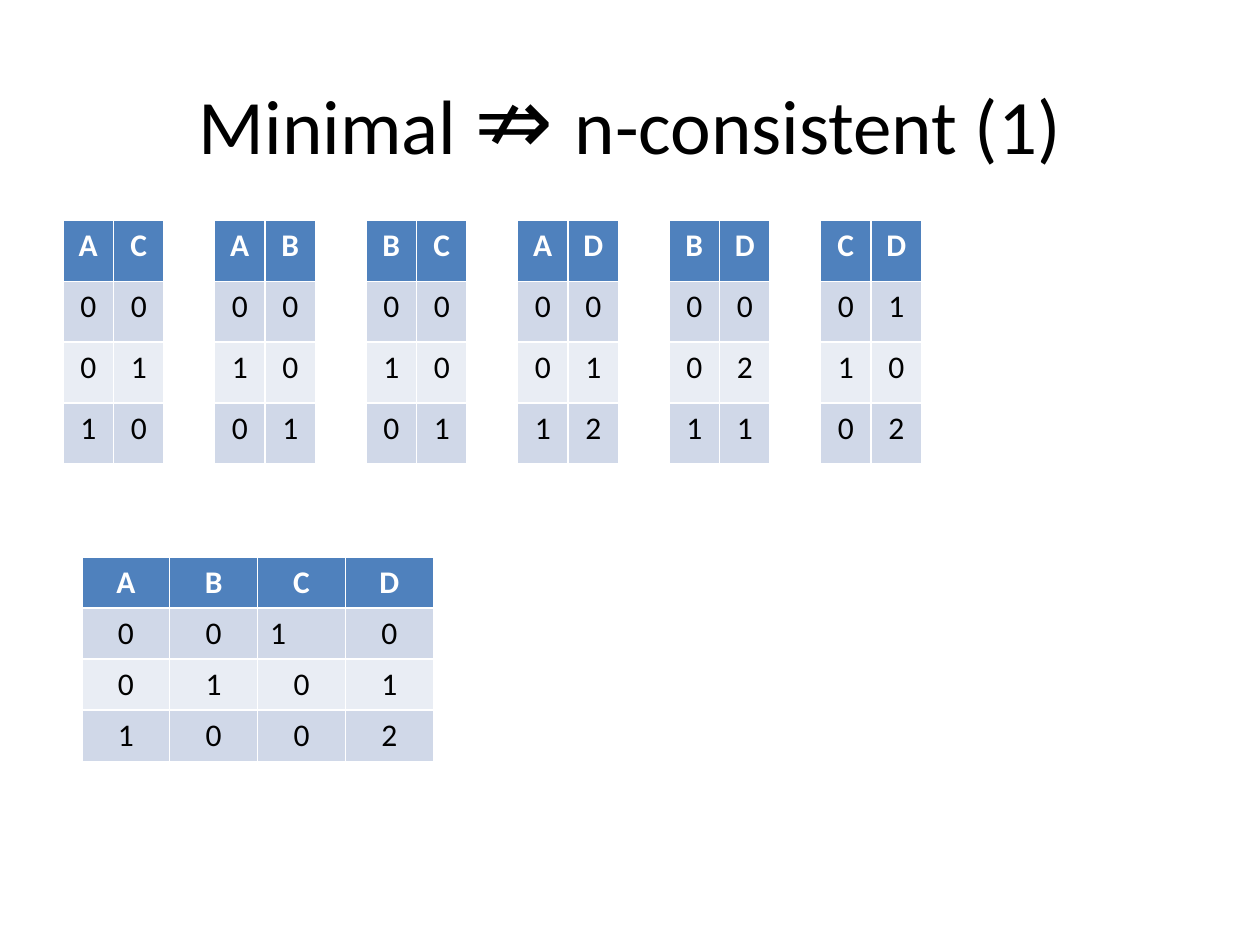
from dataclasses import dataclass

from pptx import Presentation
from pptx.dml.color import RGBColor as Color
from pptx.enum.text import MSO_ANCHOR as Anchor, PP_ALIGN as Align
from pptx.util import Inches, Pt

TITLE = [("Minimal ", "title_size"), ("⇏ ", "symbol_size"), ("n-consistent (1)", "title_size")]
TITLE_BOX = (0.5, 0.3, 9, 1.25)

CONSTRAINTS = [
    ("AC", "00", "01", "10"),
    ("AB", "00", "10", "01"),
    ("BC", "00", "10", "01"),
    ("AD", "00", "01", "12"),
    ("BD", "00", "02", "11"),
    ("CD", "01", "10", "02"),
]
CONSTRAINTS_BOX = (0.5, 1.75, 6.82, 1.93)

SOLUTIONS = [
    ["A", "B", "C", "D"],
    ["0", "0", "1\t", "0"],
    ["0", "1", "0", "1"],
    ["1", "0", "0", "2"],
]
SOLUTIONS_BOX = (0.65, 4.42, 2.79, 1.6)


@dataclass
class Theme:
    font: str = "Calibri"
    title_size: int = 44
    symbol_size: int = 54
    cell_size: int = 18
    text: str = "000000"
    header_text: str = "FFFFFF"
    header: str = "4F81BD"
    odd_row: str = "D0D8E8"
    even_row: str = "E9EDF4"
    gap: str = "FFFFFF"


THEME = Theme()


def style(font, color, bold=False):
    font.name = THEME.font
    font.bold = bold
    font.color.rgb = Color.from_string(color)


def add_title(slide):
    title = slide.shapes.title
    title.left, title.top, title.width, title.height = map(Inches, TITLE_BOX)
    title.text_frame.vertical_anchor = Anchor.MIDDLE
    para = title.text_frame.paragraphs[0]
    para.alignment = Align.CENTER
    style(para.font, THEME.text)
    for text, size in TITLE:
        span = para.add_run()
        span.text = text
        span.font.size = Pt(getattr(THEME, size))


def row_fill(row):
    if row == 0:
        return THEME.header
    return THEME.odd_row if row % 2 else THEME.even_row


def add_grid(slide, rows, box):
    frame = slide.shapes.add_table(len(rows), len(rows[0]), *map(Inches, box))
    for row, values in enumerate(rows):
        for column, value in enumerate(values):
            cell = frame.table.cell(row, column)
            cell.fill.solid()
            cell.fill.fore_color.rgb = Color.from_string(row_fill(row) if value else THEME.gap)
            cell.text = value
            para = cell.text_frame.paragraphs[0]
            para.alignment = Align.CENTER
            para.font.size = Pt(THEME.cell_size)
            style(para.font, THEME.text if row else THEME.header_text, bold=row == 0)


def side_by_side(relations):
    rows = []
    for pairs in zip(*relations):
        cells = [cell for pair in pairs for cell in (*pair, "")]
        rows.append(cells[:-1])
    return rows


def main():
    deck = Presentation()
    deck.slide_width, deck.slide_height = Inches(10), Inches(7.5)
    slide = deck.slides.add_slide(deck.slide_layouts[5])
    add_title(slide)
    add_grid(slide, side_by_side(CONSTRAINTS), CONSTRAINTS_BOX)
    add_grid(slide, SOLUTIONS, SOLUTIONS_BOX)
    deck.save("out.pptx")


if __name__ == "__main__":
    main()
